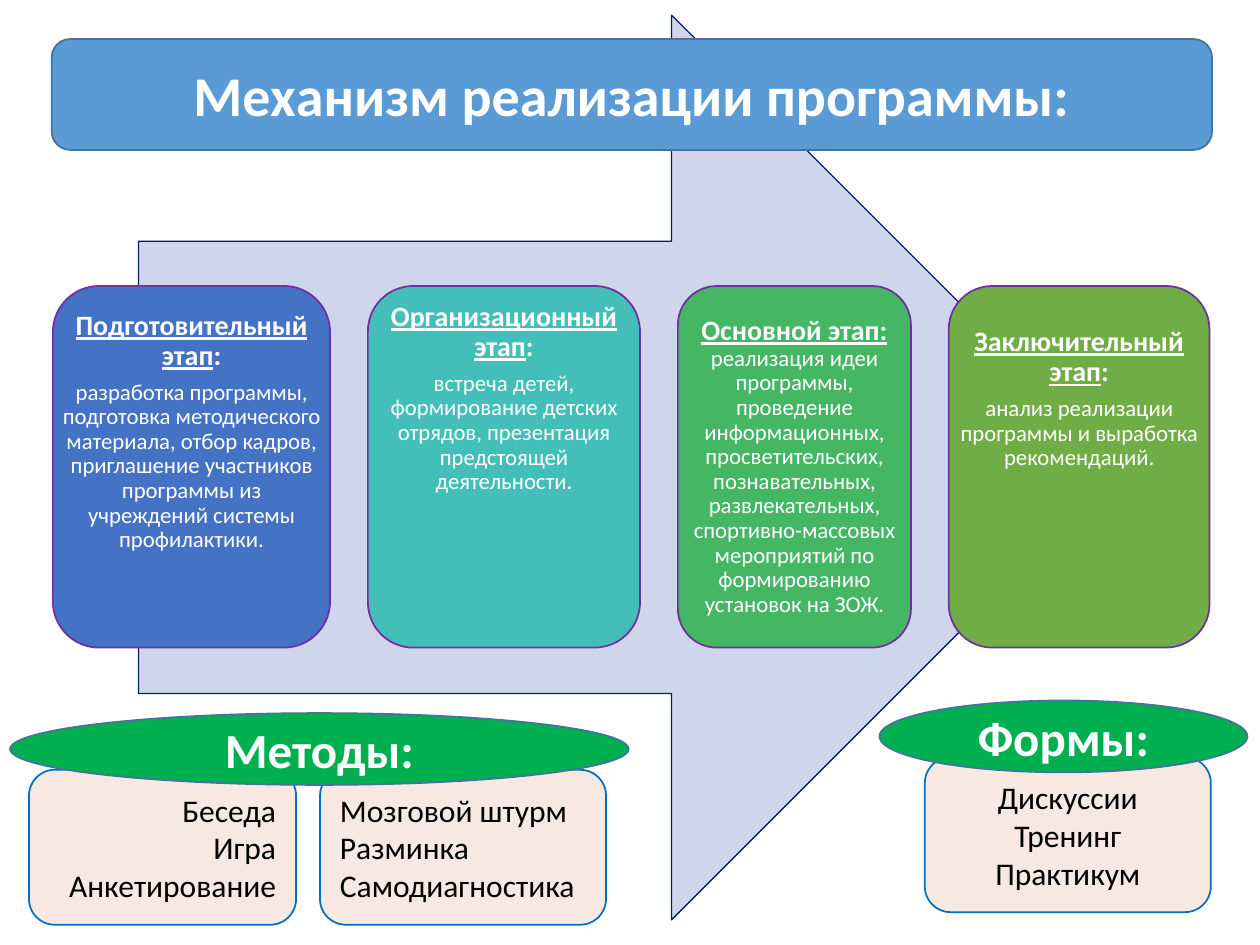
import pptx
import pptx.util
import pptx.dml.color
import pptx.enum.shapes
import pptx.enum.text

Inches = pptx.util.Inches
Pt = pptx.util.Pt
SHAPE = pptx.enum.shapes.MSO_SHAPE
ANCHOR = pptx.enum.text.MSO_ANCHOR
ALIGN = pptx.enum.text.PP_ALIGN

COLORS = {
    "white": "FFFFFF", "black": "000000", "arrow": "CFD5EA", "navy": "002060",
    "blue": "4472C4", "teal": "43BEB9", "green": "45B664", "olive": "70AD47",
    "purple": "7030A0", "title": "5B9BD5", "title_line": "43739E",
    "panel": "F7E8E1", "panel_line": "0070C0", "oval": "00B050",
}

STAGES = [
    (2.2, "blue", 0.2, [[("Подготовительный этап", True), (":", False)],
     "разработка программы, подготовка методического материала, отбор кадров, "
     "приглашение участников программы из учреждений системы профилактики."]),
    (2.16, "teal", 0.13, [[("Организационный этап", True), (":", False)],
     "встреча детей, формирование детских отрядов, презентация предстоящей деятельности."]),
    (1.85, "green", None, [[("Основной этап: ", True)],
     "реализация идеи программы, проведение информационных, просветительских, "
     "познавательных, развлекательных, спортивно-массовых мероприятий по "
     "формированию установок на ЗОЖ."]),
    (2.07, "olive", 0.33, [[("Заключительный этап", True), (":", False)],
     "анализ реализации программы и выработка рекомендаций."]),
]


def rgb(name):
    """Return the named colour."""
    return pptx.dml.color.RGBColor.from_string(COLORS[name])


def add_box(s, kind, box, fill, line, width=1):
    """Add a filled and outlined preset shape."""
    sp = s.shapes.add_shape(kind, *map(Inches, box))
    sp.shadow.inherit = False
    sp.fill.solid()
    sp.fill.fore_color.rgb = rgb(fill)
    sp.line.color.rgb = rgb(line)
    sp.line.width = Pt(width)
    return sp


def add_run(p, text, size=18, color="white", bold=False, underline=False):
    """Add a formatted run to a paragraph."""
    r = p.add_run()
    r.text = text
    r.font.name = "Calibri"
    r.font.size = Pt(size)
    r.font.bold = bold
    r.font.underline = underline
    r.font.color.rgb = rgb(color)


def set_lines(sp, lines, align=ALIGN.CENTER, **fmt):
    """Write one paragraph per line, centred vertically."""
    tf = sp.text_frame
    tf.word_wrap = True
    tf.vertical_anchor = ANCHOR.MIDDLE
    for i, line in enumerate(lines):
        p = tf.add_paragraph() if i else tf.paragraphs[0]
        p.alignment = align
        add_run(p, line, **fmt)


def add_stage(s, box, fill, top, heading, body):
    """Add a stage card with an underlined heading and a description."""
    add_box(s, SHAPE.ROUNDED_RECTANGLE, box, fill, "purple")
    tf = s.shapes.add_textbox(*map(Inches, box)).text_frame
    tf.word_wrap = True
    tf.margin_left = tf.margin_right = tf.margin_top = tf.margin_bottom = Inches(0.07)
    inline = top is None
    tf.vertical_anchor = ANCHOR.MIDDLE if inline else ANCHOR.TOP
    if not inline:
        tf.margin_top = Inches(top)
    p = tf.paragraphs[0]
    for text, underline in heading:
        add_run(p, text, size=16, bold=True, underline=underline)
    add_run(p if inline else tf.add_paragraph(), body, size=13)
    for p in tf.paragraphs:
        p.alignment = ALIGN.CENTER
        p.line_spacing = 0.9
    if not inline:
        tf.paragraphs[0].space_after = Pt(5)


def add_stages(s, left, top, height, gap):
    """Lay the stage cards out in a row with equal gaps."""
    for width, fill, inset, (heading, body) in STAGES:
        add_stage(s, (left, top, width, height), fill, inset, heading, body)
        left += width + gap


def add_list_group(s, left, top, width, title, panels):
    """Add list panels under an overlapping oval heading."""
    for dx, panel_width, align, lines in panels:
        sp = add_box(s, SHAPE.ROUNDED_RECTANGLE,
                     (left + dx, top + 0.45, panel_width, 1.23), "panel", "panel_line")
        set_lines(sp, lines, align, color="black")
    sp = add_box(s, SHAPE.OVAL, (left, top, width, 0.57), "oval", "title_line")
    set_lines(sp, [title], size=28, bold=True)


def add_title(s, box, text):
    """Add the title banner."""
    sp = add_box(s, SHAPE.FLOWCHART_ALTERNATE_PROCESS, box, "title", "title_line")
    set_lines(sp, [text], size=32, bold=True)


def main():
    """Build and save the slide."""
    prs = pptx.Presentation()
    prs.slide_width, prs.slide_height = Inches(10), Inches(7.5)
    s = prs.slides.add_slide(prs.slide_layouts[6])
    add_box(s, SHAPE.RIGHT_ARROW, (1.1, 0.12, 7.82, 7.18), "arrow", "navy", 0.75)
    add_stages(s, left=0.42, top=2.27, height=2.87, gap=0.3)
    add_title(s, (0.41, 0.31, 9.21, 0.88), "Механизм реализации программы:")
    add_list_group(s, 0.08, 5.66, 4.91, "Методы:", [
        (0.15, 2.12, ALIGN.RIGHT, ["Беседа", "Игра", "Анкетирование"]),
        (2.46, 2.27, ALIGN.LEFT, ["Мозговой штурм", "Разминка", "Самодиагностика"]),
    ])
    add_list_group(s, 6.98, 5.56, 2.92, "Формы:", [
        (0.36, 2.27, ALIGN.CENTER, ["Дискуссии", "Тренинг", "Практикум"]),
    ])
    prs.save("out.pptx")


if __name__ == "__main__":
    main()
